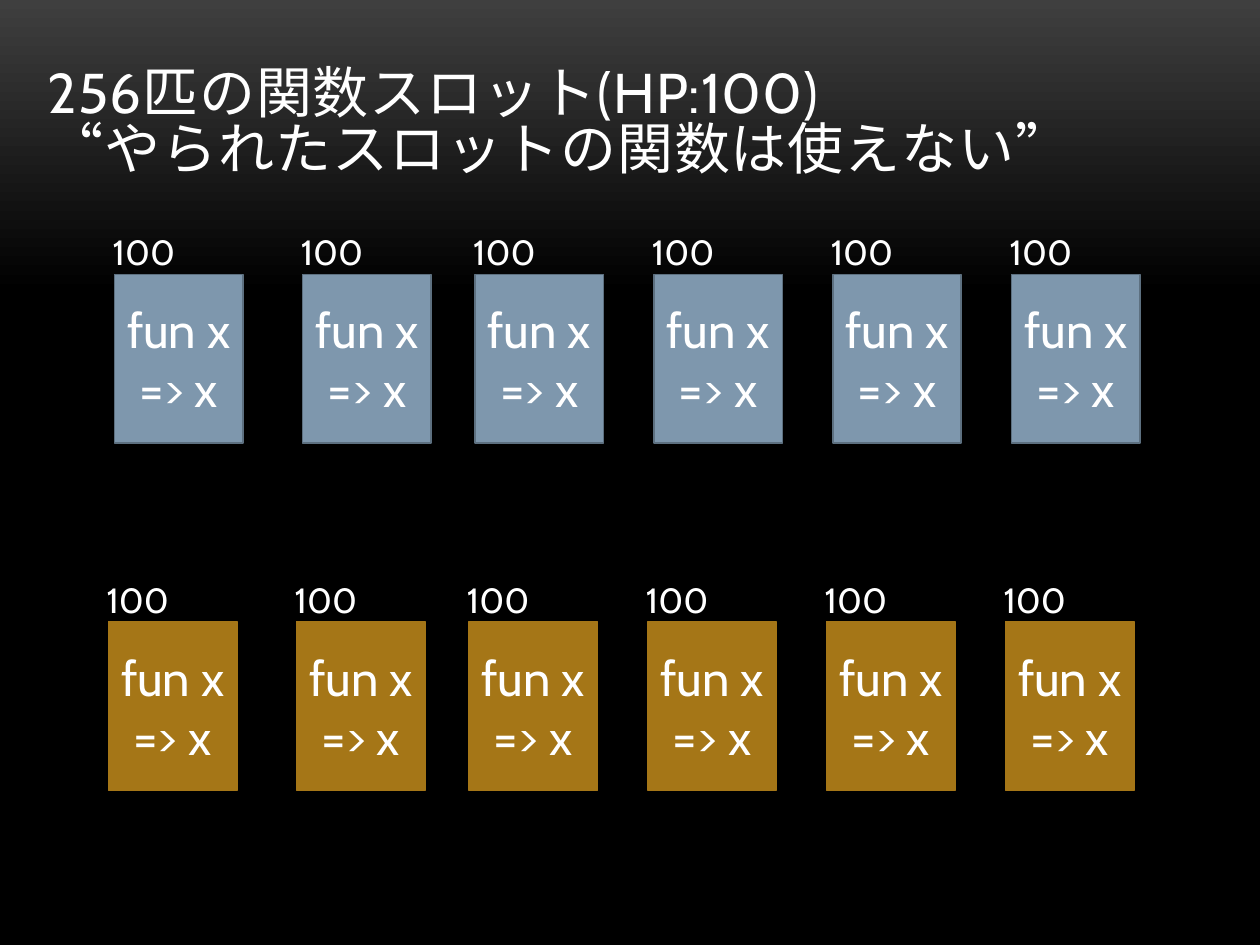
from copy import deepcopy
from dataclasses import dataclass

from pptx import Presentation
from pptx.dml.color import RGBColor
from pptx.enum.shapes import MSO_SHAPE
from pptx.enum.text import MSO_ANCHOR, MSO_AUTO_SIZE, PP_ALIGN
from pptx.slide import Slide
from pptx.text.text import TextFrame
from pptx.util import Pt

COLORS = {
    "text": "FFFFFF", "glow": "3F3F3F", "black": "000000",
    "blue": "7E97AD", "blue_edge": "5D7080", "gold": "A57617",
}
FONT = "Cabin"
CARD_W, CARD_H = 73.4, 96.5
LABEL_DX, LABEL_DY = -8.2, -28.4
COLUMNS = [0, 107.5] + [206 + 102.2 * i for i in range(4)]


@dataclass
class SlotRow:
    left: float
    top: float
    fill: str
    edge: str


ROWS = [
    SlotRow(65.5, 156.8, "blue", "blue_edge"),
    SlotRow(62, 355.2, "gold", "gold"),
]


def color(name: str) -> RGBColor:
    return RGBColor.from_string(COLORS[name])


def write(tf: TextFrame, text: str, size: float, align: PP_ALIGN) -> None:
    """Fill the frame with one paragraph; a vertical tab is a line break."""
    tf.word_wrap = True
    p = tf.paragraphs[0]
    p.text = text
    p.alignment = align
    for r in p.runs:
        for name, value in {"name": FONT, "size": Pt(size), "bold": False}.items():
            setattr(r.font, name, value)
        r.font.color.rgb = color("text")


def paint_background(s: Slide) -> None:
    fill = s.background.fill
    fill.gradient()
    fill.gradient_angle = 270
    last = s.element.xpath(".//a:gs")[-1]
    last.addnext(deepcopy(last))
    stops = [(0, "glow"), (0.31, "black"), (1, "black")]
    for stop, (position, name) in zip(fill.gradient_stops, stops):
        stop.position = position
        stop.color.rgb = color(name)


def add_title(s: Slide, text: str) -> None:
    sp = s.shapes.title
    box = {"left": 20.2, "top": 25.9, "width": 668.9, "height": 90.7}
    for name, value in box.items():
        setattr(sp, name, Pt(value))
    tf = sp.text_frame
    write(tf, text, 32, PP_ALIGN.LEFT)
    tf.auto_size = MSO_AUTO_SIZE.NONE
    tf.vertical_anchor = MSO_ANCHOR.MIDDLE
    p = tf.paragraphs[0]
    p.line_spacing = 0.83
    for r in p.runs:
        r.font._element.set("spc", "50")


def add_slot(s: Slide, row: SlotRow, dx: float) -> None:
    """Draw one function card with its hit points above it."""
    left = row.left + dx
    sp = s.shapes.add_shape(MSO_SHAPE.RECTANGLE, Pt(left), Pt(row.top), Pt(CARD_W), Pt(CARD_H))
    sp.shadow.inherit = False
    sp.fill.solid()
    sp.fill.fore_color.rgb = color(row.fill)
    sp.line.color.rgb = color(row.edge)
    sp.line.width = Pt(0.85)
    sp.text_frame.vertical_anchor = MSO_ANCHOR.MIDDLE
    write(sp.text_frame, "fun x\v=> x", 28, PP_ALIGN.CENTER)

    label = s.shapes.add_textbox(Pt(left + LABEL_DX), Pt(row.top + LABEL_DY), Pt(64.8), Pt(31.5))
    write(label.text_frame, "100", 20, PP_ALIGN.LEFT)
    label.text_frame.auto_size = MSO_AUTO_SIZE.SHAPE_TO_FIT_TEXT


def main() -> None:
    prs = Presentation()
    prs.slide_width, prs.slide_height = Pt(720), Pt(540)
    s = prs.slides.add_slide(prs.slide_layouts[5])
    paint_background(s)
    add_title(s, "256匹の関数スロット(HP:100)\v“やられたスロットの関数は使えない”")
    for row in ROWS:
        for dx in COLUMNS:
            add_slot(s, row, dx)
    prs.save("out.pptx")


if __name__ == "__main__":
    main()
